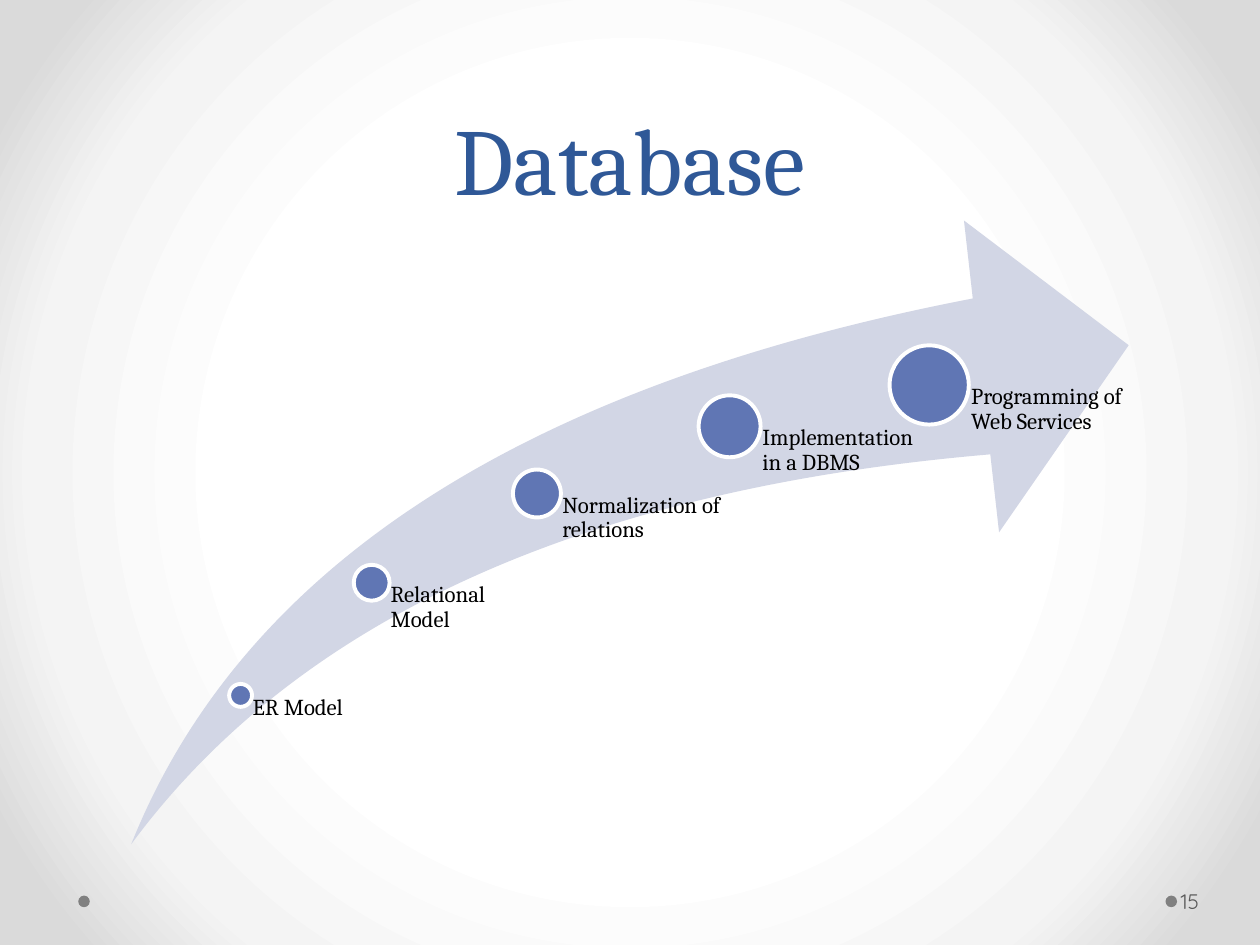
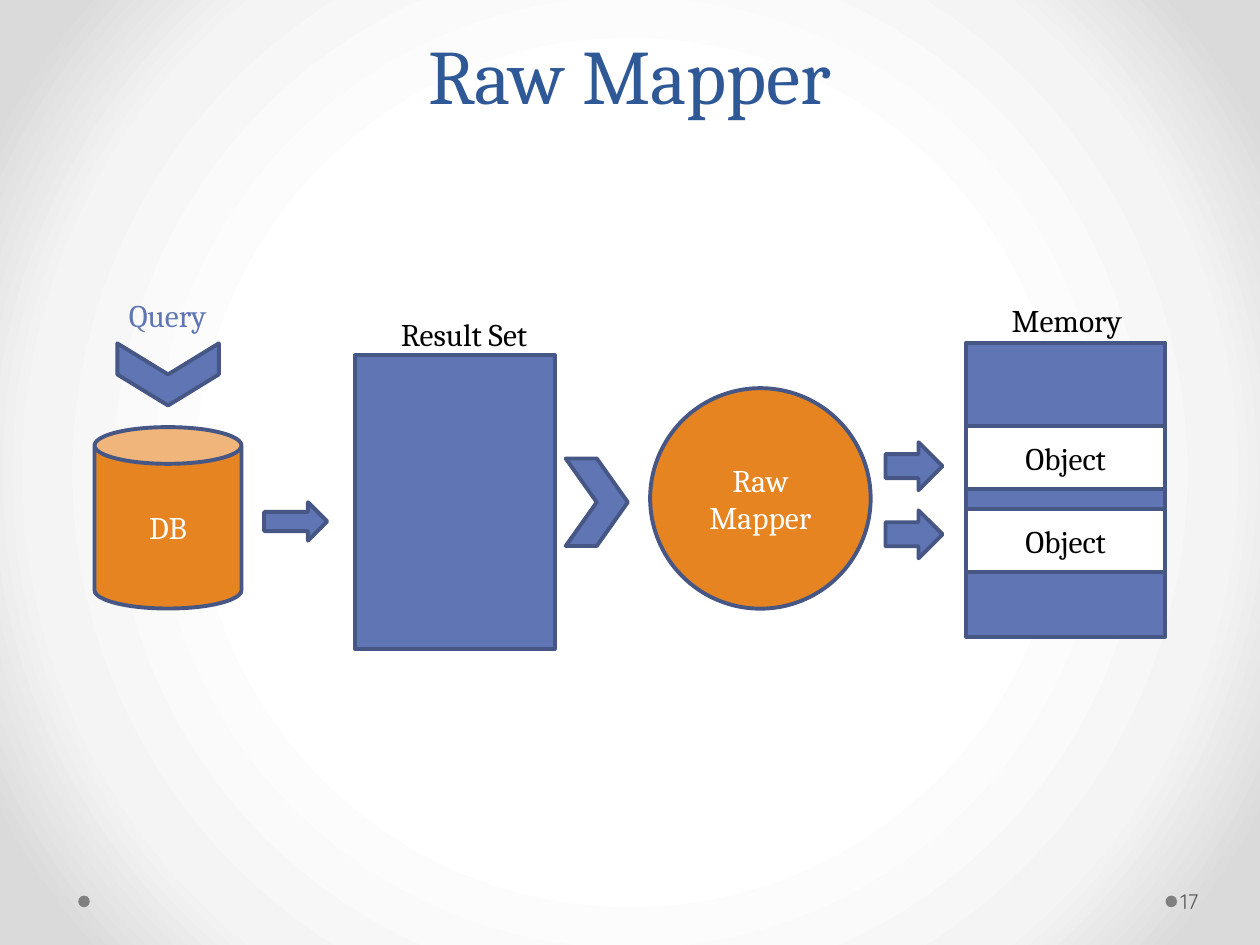
"""Build two slides: database design steps and the raw mapper data flow."""
from lxml import etree
from pptx import Presentation
from pptx.dml.color import RGBColor
from pptx.enum.shapes import MSO_SHAPE
from pptx.enum.text import MSO_ANCHOR, MSO_AUTO_SIZE, PP_ALIGN
from pptx.oxml.ns import qn
from pptx.util import Pt

OVAL, RECT, CAN = MSO_SHAPE.OVAL, MSO_SHAPE.RECTANGLE, MSO_SHAPE.CAN
SWOOSH, CHEVRON, ARROW = MSO_SHAPE.SWOOSH_ARROW, MSO_SHAPE.CHEVRON, MSO_SHAPE.RIGHT_ARROW
TOP, MIDDLE, BOTTOM = MSO_ANCHOR.TOP, MSO_ANCHOR.MIDDLE, MSO_ANCHOR.BOTTOM
LEFT, CENTER = PP_ALIGN.LEFT, PP_ALIGN.CENTER
FIT_TEXT = MSO_AUTO_SIZE.SHAPE_TO_FIT_TEXT

WHITE = RGBColor(0xFF, 0xFF, 0xFF)
BLACK = RGBColor(0, 0, 0)
TITLE_BLUE = RGBColor(0x2F, 0x58, 0x97)
BLUE = RGBColor(0x60, 0x76, 0xB4)
DARK_BLUE = RGBColor(0x47, 0x57, 0x85)
PALE_BLUE = RGBColor(0xD2, 0xD6, 0xE5)
ORANGE = RGBColor(0xE6, 0x84, 0x22)
DOT_GRAY = RGBColor(0x80, 0x80, 0x80)
NUMBER_GRAY = RGBColor(0x59, 0x59, 0x59)
BACKGROUND_STOPS = [(50, "FFFFFF"), (76, "F4F4F4"), (92, "DADADA")]


def add_shape(s, kind, box, fill, line=None):
    sp = s.shapes.add_shape(kind, *[Pt(v) for v in box])
    sp.shadow.inherit = False
    sp.fill.solid()
    sp.fill.fore_color.rgb = fill
    if line is None:
        sp.line.fill.background()
    else:
        sp.line.color.rgb = line
        sp.line.width = Pt(2.25)
    return sp


def set_text(sp, text, size, color, align=CENTER, anchor=MIDDLE, wrap=True, font="Cambria"):
    tf = sp.text_frame
    tf.text = text
    tf.word_wrap = wrap
    tf.vertical_anchor = anchor
    p = tf.paragraphs[0]
    p.alignment = align
    r = p.runs[0]
    r.font.size = Pt(size)
    r.font.name = font
    r.font.color.rgb = color
    return tf


prs = Presentation()
prs.slide_width, prs.slide_height = Pt(720), Pt(540)

master = prs.slide_master
master.background.fill.gradient()
grad = master.element.find(".//" + qn("a:gradFill"))
for child in list(grad):
    grad.remove(child)
stops = etree.SubElement(grad, qn("a:gsLst"))
for position, color in BACKGROUND_STOPS:
    stop = etree.SubElement(stops, qn("a:gs"), pos=str(position * 1000))
    etree.SubElement(stop, qn("a:srgbClr"), val=color)
circle = etree.SubElement(grad, qn("a:path"), path="circle")
etree.SubElement(circle, qn("a:fillToRect"), l="50000", t="50000", r="50000", b="50000")

slides = []
for title, title_size, title_height, number in [
    ("Database", 54, 126, "15"),
    ("Raw Mapper", 44, 72, "17"),
]:
    s = prs.slides.add_slide(prs.slide_layouts[6])
    slides.append(s)
    for x in (666, 44.7):
        add_shape(s, OVAL, (x, 511.8, 6.6, 6.6), DOT_GRAY)
    sp = s.shapes.add_textbox(Pt(36), 0, Pt(648), Pt(title_height))
    tf = set_text(sp, title, title_size, TITLE_BLUE, anchor=BOTTOM)
    tf.paragraphs[0].line_spacing = Pt(58)
    sp = s.shapes.add_textbox(Pt(672.5), Pt(500.5), Pt(44), Pt(28.8))
    tf = set_text(sp, number, 12, NUMBER_GRAY, LEFT, font="Quicksand")
    tf.margin_left, tf.margin_right = Pt(2.2), Pt(3.6)

database, mapper = slides

swoosh_bottom = 482.4
swoosh = add_shape(database, SWOOSH, (75, 126, 570, swoosh_bottom - 126), PALE_BLUE)
swoosh.adjustments[0] = swoosh.adjustments[1] = 0.25
for step, x, y, diameter, width in [
    ("ER Model", 137.5, 397.4, 13.1, 75),
    ("Relational Model", 212.4, 333, 20.5, 94.3),
    ("Normalization of relations", 306.8, 282, 27.4, 110),
    ("Implementation in a DBMS", 416.9, 243.6, 35.4, 114),
    ("Programming of Web Services", 531, 220, 45.3, 114),
]:
    radius = diameter / 2
    add_shape(database, OVAL, (x - radius, y - radius, diameter, diameter), BLUE, WHITE)
    sp = database.shapes.add_textbox(Pt(x), Pt(y), Pt(width), Pt(swoosh_bottom - y))
    tf = set_text(sp, step, 13, BLACK, LEFT, TOP)
    tf.margin_left = Pt(diameter * 0.53)
    tf.margin_top = tf.margin_right = tf.margin_bottom = 0
    tf.paragraphs[0].line_spacing = 0.9

for x, y in [(552, 195.8), (203, 203)]:
    add_shape(mapper, RECT, (x, y, 114, 168), BLUE, DARK_BLUE)
for kind, box, fill, text, color in [
    (RECT, (552, 243.4, 114, 36), WHITE, "Object", BLACK),
    (RECT, (552, 290.9, 114, 36), WHITE, "Object", BLACK),
    (OVAL, (371.5, 221.8, 126, 126), ORANGE, "Raw Mapper", WHITE),
    (CAN, (54, 244.1, 84, 103.7), ORANGE, "DB", WHITE),
]:
    set_text(add_shape(mapper, kind, box, fill, DARK_BLUE), text, 18, color)
for kind, box, rotation in [
    (ARROW, (151, 287, 36, 22), 0),
    (ARROW, (506, 252.7, 32.6, 27.4), 0),
    (ARROW, (506, 291.6, 32.6, 27.4), 0),
    (CHEVRON, (323.3, 262, 35.5, 50), 0),
    (CHEVRON, (78.3, 185, 35.5, 58), 90),
]:
    add_shape(mapper, kind, box, BLUE, DARK_BLUE).rotation = rotation
for text, x, y, width in [("Memory", 571, 168.7, 83.5), ("Result Set", 222, 176.6, 94.3)]:
    sp = mapper.shapes.add_textbox(Pt(x), Pt(y), Pt(width), Pt(28.8))
    set_text(sp, text, 18, BLACK, LEFT, TOP, wrap=False).auto_size = FIT_TEXT
sp = mapper.shapes.add_textbox(Pt(60.5), Pt(169.2), Pt(70.6), Pt(21.6))
set_text(sp, "Query", 18, BLUE)

prs.save("out.pptx")
